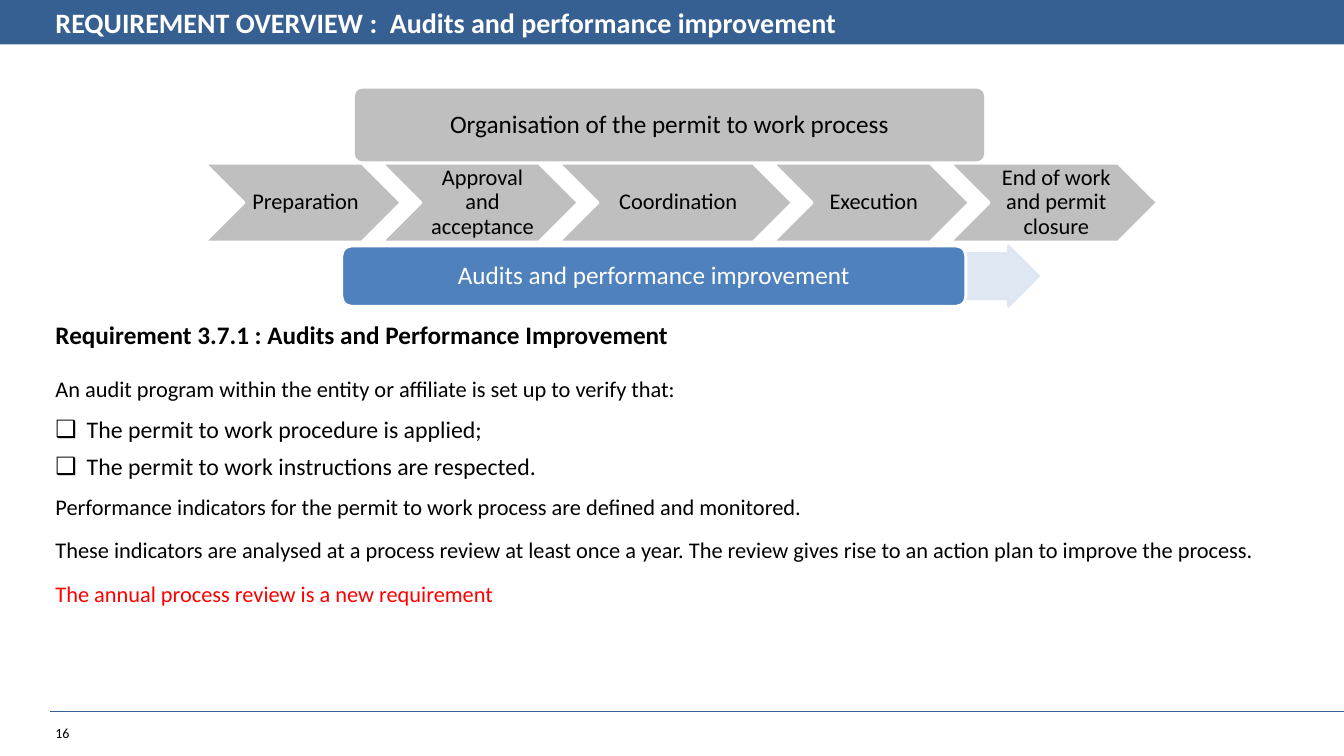
from lxml import etree
from pptx import Presentation
from pptx import util as u
from pptx.dml.color import RGBColor
from pptx.enum import shapes, text
from pptx.oxml import ns

FONT = "Calibri"
NAVY, BLUE, PALE = "376092", "4F81BD", "DCE6F2"
GREY, WHITE, BLACK, RED = "BFBFBF", "FFFFFF", "000000", "FF0000"
WIDTH, HEIGHT = u.Inches(13.33), u.Inches(7.5)

STEP_LEFT, STEP_OVERLAP = 15.23, 1.46
STEPS = [
    ("Preparation", 14.63),
    ("Approval and acceptance", 14.63),
    ("Coordination", 17.4),
    ("Execution", 14.63),
    ("End of work and permit closure", 15.45),
]

# Text, size, bold, colour, space before, space after, kind
REQUIREMENT = [
    ("Requirement 3.7.1 : Audits and Performance Improvement", 18, True, BLACK, 0, 12, "left"),
    ("An audit program within the entity or affiliate is set up to verify that:",
     16, False, BLACK, 6, 6, "justified"),
    ("The permit to work procedure is applied;", 17, False, BLACK, 3, 3, "bullet"),
    ("The permit to work instructions are respected.", 17, False, BLACK, 3, 3, "bullet"),
    ("Performance indicators for the permit to work process are defined and monitored.",
     16, False, BLACK, 6, 6, "justified"),
    ("These indicators are analysed at a process review at least once a year. "
     "The review gives rise to an action plan to improve the process.",
     16, False, BLACK, 6, 6, "justified"),
    ("The annual process review is a new requirement", 16, False, RED, 6, 6, "left"),
]


def colour(value):
    return RGBColor.from_string(value)


def area(left, top, width, height):
    """Turn percentages of the slide into lengths."""
    return (int(WIDTH * left / 100), int(HEIGHT * top / 100),
            int(WIDTH * width / 100), int(HEIGHT * height / 100))


def format_runs(paragraph, size, value, bold=False):
    for run in paragraph.runs:
        run.font.name = FONT
        run.font.size = u.Pt(size)
        run.font.bold = bold
        run.font.color.rgb = colour(value)


def place(shape, box):
    shape.left, shape.top, shape.width, shape.height = area(*box)


def set_bullet(paragraph, character=None):
    properties = paragraph._p.get_or_add_pPr()
    indent = u.Inches(0.31) if character else 0
    properties.set("marL", str(indent))
    properties.set("indent", str(-indent))
    tag = "a:buChar" if character else "a:buNone"
    bullet = etree.SubElement(properties, ns.qn(tag))
    if character:
        bullet.set("char", character)


def add_block(slide, kind, box, fill, line=None, label="", size=16,
              value=BLACK, insets=(0.07, 0.02, 0.02, 0.02)):
    shape = slide.shapes.add_shape(kind, *area(*box))
    shape.shadow.inherit = False
    shape.fill.solid()
    shape.fill.fore_color.rgb = colour(fill)
    if line:
        shape.line.color.rgb = colour(line)
        shape.line.width = u.Pt(2)
    else:
        shape.line.fill.background()
    if label:
        frame = shape.text_frame
        frame.word_wrap = True
        frame.vertical_anchor = text.MSO_ANCHOR.MIDDLE
        (frame.margin_left, frame.margin_top,
         frame.margin_right, frame.margin_bottom) = map(u.Inches, insets)
        frame.text = label
        paragraph = frame.paragraphs[0]
        paragraph.alignment = text.PP_ALIGN.CENTER
        paragraph.line_spacing = 0.9
        format_runs(paragraph, size, value)
    return shape


def set_opacity(shape, percent):
    for element in shape._element.spPr.iter(ns.qn("a:srgbClr")):
        etree.SubElement(element, ns.qn("a:alpha")).set("val", str(percent * 1000))


def add_header(slide):
    bar = add_block(slide, shapes.MSO_SHAPE.RECTANGLE, (0, 0, 100, 5.87), NAVY)
    slide.shapes._spTree.insert(2, bar._element)  # behind the title
    title = slide.shapes.title
    place(title, (3.38, 0, 78.54, 5.87))
    frame = title.text_frame
    frame.text = "REQUIREMENT OVERVIEW :  Audits and performance improvement"
    frame.word_wrap = True
    frame.auto_size = text.MSO_AUTO_SIZE.NONE
    frame.vertical_anchor = text.MSO_ANCHOR.MIDDLE
    frame.paragraphs[0].alignment = text.PP_ALIGN.LEFT
    format_runs(frame.paragraphs[0], 20, WHITE, True)


def add_requirement(slide):
    body = slide.placeholders[1]
    place(body, (3.38, 41.6, 92.95, 50.4))
    frame = body.text_frame
    frame.auto_size = text.MSO_AUTO_SIZE.NONE
    frame.text = "\n".join(row[0] for row in REQUIREMENT)
    for paragraph, row in zip(frame.paragraphs, REQUIREMENT):
        _, size, bold, value, before, after, kind = row
        set_bullet(paragraph, "❑" if kind == "bullet" else None)
        justified = kind == "justified"
        paragraph.alignment = text.PP_ALIGN.JUSTIFY if justified else text.PP_ALIGN.LEFT
        paragraph.space_before = u.Pt(before)
        paragraph.space_after = u.Pt(after)
        format_runs(paragraph, size, value, bold)


def add_process(slide):
    # Organisation banner
    banner = add_block(slide, shapes.MSO_SHAPE.ROUNDED_RECTANGLE,
                       (26.41, 11.73, 46.81, 9.6), GREY,
                       label="Organisation of the permit to work process",
                       size=18, insets=(0.01,) * 4)
    banner.adjustments[0] = 0.1

    # Chain of steps
    left = STEP_LEFT
    for label, width in STEPS:
        add_block(slide, shapes.MSO_SHAPE.CHEVRON, (left, 21.6, width, 10.4),
                  GREY, WHITE, label)
        left += width - STEP_OVERLAP

    # Current topic and its arrow
    arrow = add_block(slide, shapes.MSO_SHAPE.RIGHT_ARROW,
                      (70.67, 32.53, 6.6, 8), PALE, PALE)
    arrow.adjustments[0] = 0.75
    set_opacity(arrow, 90)
    add_block(slide, shapes.MSO_SHAPE.ROUNDED_RECTANGLE, (25.43, 32.53, 46.44, 8),
              BLUE, WHITE, "Audits and performance improvement", 18, WHITE,
              (0.07, 0.04, 0.07, 0.04))


def add_footer(slide):
    left, top, width, _ = area(3.75, 94.13, 96.25, 0)
    rule = slide.shapes.add_connector(shapes.MSO_CONNECTOR.STRAIGHT,
                                      left, top, left + width, top)
    rule.line.color.rgb = colour(NAVY)
    rule.line.width = u.Pt(0.75)
    etree.SubElement(rule._element.spPr, ns.qn("a:effectLst"))

    number = slide.shapes.add_textbox(*area(3.38, 95.2, 5.33, 3.6))
    number.text_frame.word_wrap = True
    number.text_frame.text = "16"
    format_runs(number.text_frame.paragraphs[0], 10, BLACK)


def main():
    presentation = Presentation()
    presentation.slide_width, presentation.slide_height = WIDTH, HEIGHT
    slide = presentation.slides.add_slide(presentation.slide_layouts[1])
    add_footer(slide)
    add_header(slide)
    add_requirement(slide)
    add_process(slide)
    presentation.save("out.pptx")


if __name__ == "__main__":
    main()
